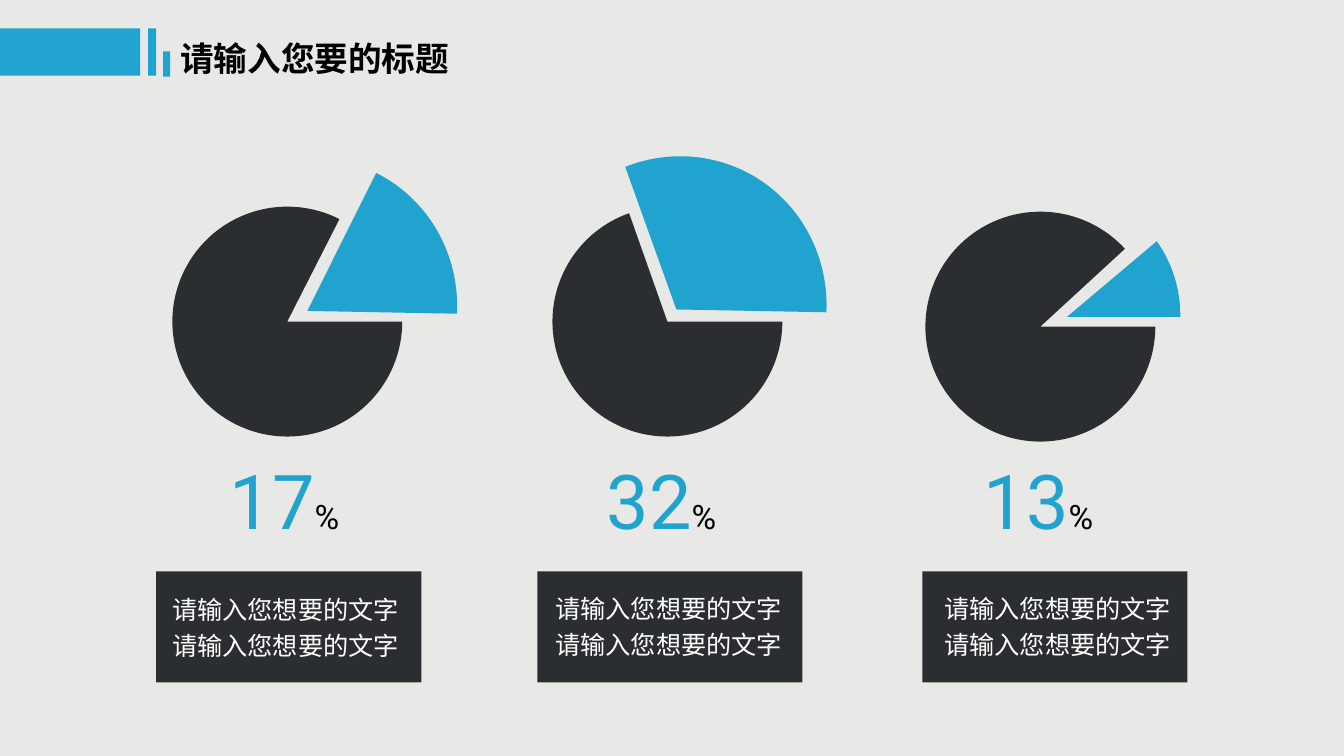
from lxml import etree
from pptx import Presentation
from pptx.dml.color import RGBColor
from pptx.enum.shapes import MSO_SHAPE
from pptx.enum.text import MSO_AUTO_SIZE
from pptx.oxml.ns import qn
from pptx.util import Pt

RECTANGLE = MSO_SHAPE.RECTANGLE
PIE = MSO_SHAPE.PIE
GROW = MSO_AUTO_SIZE.SHAPE_TO_FIT_TEXT

BLUE, DARK, PALE = "21A3D0", "2B2E30", "E8E8E6"
BLACK, WHITE = "000000", "FFFFFF"
CHINESE, LATIN = "Noto Sans CJK SC", "Roboto"

TITLE = {"name": CHINESE, "size": Pt(24), "bold": True}
NUMBER = {"name": LATIN, "size": Pt(54)}
PERCENT = {"name": LATIN, "size": Pt(24)}
CAPTION = {"name": CHINESE, "size": Pt(18)}

HEADER_BARS = [(0, 20.2, 100.1, 33.8), (105.8, 20.2, 5.8, 33.8), (116.6, 36.7, 5, 18)]
PIE_SIZE = 164.2
CAPTION_TEXT = "请输入您想要的文字"
LINE_STEP = 25.2

# Angles are in degrees, clockwise from three o'clock
COLUMNS = [
    {"value": "17", "pie": (123.1, 147.6), "pie_end": 296.96,
     "wedge": (109.4, 115.9, 220.3, 212.4), "wedge_angles": (0, 64.56),
     "turn": 296.5, "number_left": 157, "panel_left": 111.6, "caption": (115.9, 421.2)},
    {"value": "32", "pie": (394.6, 147.6), "pie_end": 250.53,
     "wedge": (373, 114.5, 220.3, 213.1), "wedge_angles": (313.78, 64.56),
     "turn": 296.5, "number_left": 426.2, "panel_left": 383.8, "caption": (389.5, 420.5)},
    {"value": "13", "pie": (661, 151.2), "pie_end": 317.38,
     "wedge": (674.6, 145.4, 175, 162), "wedge_angles": (45.97, 86.04),
     "turn": 273.9, "number_left": 695.5, "panel_left": 658.8, "caption": (667.4, 420.5)},
]


def colour(hex_string):
    return RGBColor.from_string(hex_string)


def add_block(page, kind, frame, fill):
    shape = page.shapes.add_shape(kind, *map(Pt, frame))
    shape.shadow.inherit = False
    shape.fill.solid()
    shape.fill.fore_color.rgb = colour(fill)
    shape.line.fill.background()
    return shape


def add_pie(page, frame, angles, fill, turn=0):
    pie = add_block(page, PIE, frame, fill)
    for index, angle in enumerate(angles):
        pie.adjustments[index] = angle * 0.6  # 60000ths of a degree, per 100000
    pie.rotation = turn


def add_text(page, frame, spans):
    box = page.shapes.add_textbox(*map(Pt, frame))
    box.text_frame.word_wrap = True
    box.text_frame.auto_size = GROW
    para = box.text_frame.paragraphs[0]
    for text, text_format, text_colour in spans:
        span = para.add_run()
        span.text = text
        for attribute, value in text_format.items():
            setattr(span.font, attribute, value)
        span.font.color.rgb = colour(text_colour)
        # The East Asian typeface has no public setter
        east_asian = etree.SubElement(span._r.get_or_add_rPr(), qn("a:ea"))
        east_asian.set("typeface", text_format["name"])


def add_column(page, column):
    # Pie with its pulled-out wedge
    add_pie(page, (*column["pie"], PIE_SIZE, PIE_SIZE), (0, column["pie_end"]), DARK)
    add_pie(page, column["wedge"], column["wedge_angles"], BLUE, column["turn"])
    # Percentage
    add_text(page, (column["number_left"], 320.4, 158.4, 72.7),
             [(column["value"], NUMBER, BLUE), ("%", PERCENT, BLACK)])
    # Caption panel with two lines
    add_block(page, RECTANGLE, (column["panel_left"], 408.2, 189.4, 79.2), DARK)
    left, top = column["caption"]
    for line in range(2):
        add_text(page, (left, top + line * LINE_STEP, 198, 28.8),
                 [(CAPTION_TEXT, CAPTION, WHITE)])


def main():
    deck = Presentation()
    deck.slide_width, deck.slide_height = Pt(960), Pt(540)
    page = deck.slides.add_slide(deck.slide_layouts[6])
    page.background.fill.solid()
    page.background.fill.fore_color.rgb = colour(PALE)

    # Header
    for frame in HEADER_BARS:
        add_block(page, RECTANGLE, frame, BLUE)
    add_text(page, (121.7, 23.8, 216.7, 36), [("请输入您要的标题", TITLE, BLACK)])

    # Three columns
    for column in COLUMNS:
        add_column(page, column)
    deck.save("out.pptx")


if __name__ == "__main__":
    main()
